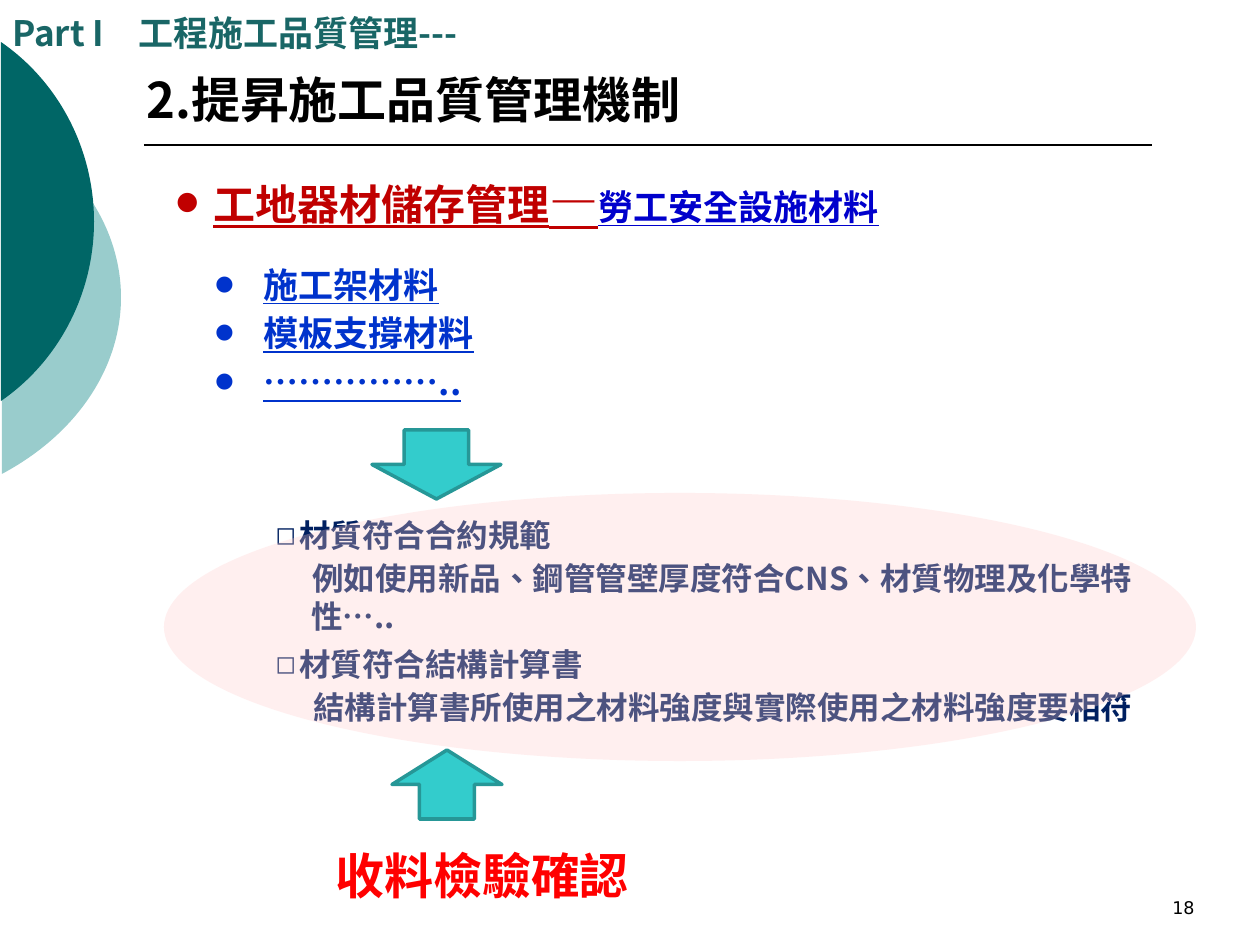
from pptx import Presentation
from pptx.dml.color import RGBColor
from pptx.enum.shapes import MSO_CONNECTOR, MSO_SHAPE
from pptx.enum.text import MSO_ANCHOR, MSO_AUTO_SIZE, PP_ALIGN
from pptx.oxml.ns import qn
from pptx.util import Pt
from lxml.etree import SubElement

SCALE = 914400 / 126
CJK = "Noto Sans CJK SC"
SYMBOL = "DejaVu Sans"
COLORS = {
    "light": "99CCCC", "dark": "006666", "black": "000000", "header": "196666",
    "navy": "002060", "blue": "0033CC", "link": "0000CC", "crimson": "C00000",
    "red": "FF0000", "arrow": "33CCCC", "edge": "269797", "pink": "FFCCCC",
}


def emu(px):
    """Turn a length in px into EMU."""
    return round(px * SCALE)


def color(name):
    """Look up a palette colour."""
    return RGBColor.from_string(COLORS[name])


def write(para, text, size=20, ink="black", font=CJK, bold=True, underline=False):
    """Add a formatted span of text to a paragraph."""
    span = para.add_run()
    span.text = text
    span.font.size = Pt(size)
    span.font.bold = bold
    span.font.underline = underline
    span.font.color.rgb = color(ink)
    span.font.name = font
    props = span._r.get_or_add_rPr()
    props.set("lang", "zh-TW")
    SubElement(props, qn("a:ea"), typeface=CJK)


def layout(para, left=0, indent=0, bullet=None, scale=60, tab=None, before=0, spacing=None):
    """Set the indents, bullet, tab stop and spacing of a paragraph."""
    props = para._p.get_or_add_pPr()
    props.set("marL", str(emu(left)))
    props.set("indent", str(emu(indent)))
    if bullet:
        SubElement(props, qn("a:buSzPct"), val=str(scale * 1000))
        SubElement(props, qn("a:buFont"), typeface=SYMBOL)
        SubElement(props, qn("a:buChar"), char=bullet)
    if tab:
        tabs = SubElement(props, qn("a:tabLst"))
        SubElement(tabs, qn("a:tab"), pos=str(emu(tab)), algn="l")
    para.space_before = Pt(before)
    if spacing:
        para.line_spacing = spacing


class Painter:
    """Holds the current page and draws each kind of element on it."""

    def __init__(self, page):
        self.shapes = page.shapes

    def finish(self, shape, fill, edge=None, opacity=None):
        """Apply fill, outline and transparency to a shape."""
        shape.shadow.inherit = False
        shape.fill.solid()
        shape.fill.fore_color.rgb = color(fill)
        if opacity:
            tone = shape._element.spPr.find(".//" + qn("a:srgbClr"))
            SubElement(tone, qn("a:alpha"), val=str(opacity * 1000))
        if edge:
            shape.line.color.rgb = color(edge)
            shape.line.width = Pt(2)
        else:
            shape.line.fill.background()

    def shape(self, kind, bounds, fill, **style):
        """Draw a preset shape."""
        self.finish(self.shapes.add_shape(kind, *map(emu, bounds)), fill, **style)

    def crescent(self, bounds, chord, bottom, shoulder, bend, reach, fill):
        """Draw the part of a disc to the right of an upright chord."""
        left, top, width, height = bounds
        right, base, middle = left + width, top + height, top + height / 2
        start = 2 * middle - bottom
        builder = self.shapes.build_freeform(emu(left), emu(top))
        builder.add_line_segments([(emu(x), emu(y)) for x, y in
                                   ((right, top), (right, base), (left, base))], close=True)
        disc = builder.convert_to_shape()
        outline = disc._element.spPr.find(".//" + qn("a:path"))
        for segment in list(outline):
            outline.remove(segment)
        steps = [
            ("moveTo", [(chord, start)]),
            ("cubicBezTo", [(shoulder, start + bend), (right, middle - reach), (right, middle)]),
            ("cubicBezTo", [(right, middle + reach), (shoulder, bottom - bend), (chord, bottom)]),
            ("close", []),
        ]
        for command, points in steps:
            segment = SubElement(outline, qn("a:" + command))
            for x, y in points:
                SubElement(segment, qn("a:pt"), x=str(emu(x - left)), y=str(emu(y - top)))
        self.finish(disc, fill)

    def rule(self, left, right, y):
        """Draw a thin horizontal line."""
        line = self.shapes.add_connector(MSO_CONNECTOR.STRAIGHT, *map(emu, (left, y, right, y)))
        line.line.color.rgb = color("black")
        line.line.width = Pt(1)
        SubElement(line._element.spPr, qn("a:effectLst"))

    def text(self, bounds, anchor=MSO_ANCHOR.TOP, wrap=True, grow=False):
        """Add a text box and return its frame."""
        frame = self.shapes.add_textbox(*map(emu, bounds)).text_frame
        frame.word_wrap = wrap
        frame.vertical_anchor = anchor
        frame.auto_size = MSO_AUTO_SIZE.SHAPE_TO_FIT_TEXT if grow else MSO_AUTO_SIZE.NONE
        return frame

    def label(self, bounds, text, anchor=MSO_ANCHOR.MIDDLE, wrap=True, grow=False, **style):
        """Add a one-paragraph text box and return its paragraph."""
        para = self.text(bounds, anchor, wrap, grow).paragraphs[0]
        write(para, text, **style)
        return para

    def listing(self, bounds, entries, anchor=MSO_ANCHOR.TOP, grow=False, **style):
        """Add a text box with one paragraph for each text and layout pair."""
        frame = self.text(bounds, anchor, grow=grow)
        for index, (text, form) in enumerate(entries):
            para = frame.add_paragraph() if index else frame.paragraphs[0]
            layout(para, **form)
            write(para, text, **style)


def main():
    """Build the slide and save the deck."""
    deck = Presentation()
    deck.slide_width, deck.slide_height = emu(1260), emu(945)
    painter = Painter(deck.slides.add_slide(deck.slide_layouts[6]))

    painter.crescent((-435, 82, 556, 431), 2, 474, 77, 40, 70, "light")
    painter.crescent((-333, 4, 427, 435), 1, 401, 59, 40, 72, "dark")
    painter.rule(144, 1152, 145)
    number = painter.label((1007, 861, 200, 63), "18", MSO_ANCHOR.BOTTOM,
                           size=10, font=SYMBOL, bold=False)
    number.alignment = PP_ALIGN.RIGHT
    header = painter.label((0, 0, 501, 66), "Part I\t工程施工品質管理---", ink="header")
    layout(header, tab=108)

    checks = [
        ("材質符合合約規範", "例如使用新品、鋼管管壁厚度符合CNS、材質物理及化學特性…..", 36),
        ("材質符合結構計算書", "結構計算書所使用之材料強度與實際使用之材料強度要相符", 37),
    ]
    entries = []
    for index, (check, detail, left) in enumerate(checks):
        entries.append((check, dict(left=24, indent=-24, bullet="◻", scale=80, before=6 * index)))
        entries.append((detail, dict(left=left, indent=1, before=3)))
    painter.listing((263, 510, 912, 224), entries, grow=True, size=18, ink="navy")

    materials = ["施工架材料", "模板支撐材料", "…………….."]
    painter.listing(
        (203, 234, 407, 208),
        [(name, dict(left=48, indent=-48, bullet="●", spacing=0.7, before=11 if index else 0))
         for index, name in enumerate(materials)],
        MSO_ANCHOR.MIDDLE, ink="blue", underline=True)

    heading = painter.text((164, 165, 973, 72), grow=True).paragraphs[0]
    layout(heading, left=37, indent=-37, bullet="●")
    for text, size, ink in (("工地器材儲存管理", 24, "crimson"), ("—", 28, "crimson"),
                            ("勞工安全設施材料", 20, "link")):
        write(heading, text, size, ink, font="Calibri", underline=True)

    painter.label((134, 56, 1022, 86), "2.提昇施工品質管理機制", size=28)
    painter.shape(MSO_SHAPE.DOWN_ARROW, (372, 430, 129, 69), "arrow", edge="edge")
    painter.shape(MSO_SHAPE.UP_ARROW, (392, 750, 110, 69), "arrow", edge="edge")
    painter.label((323, 839, 323, 72), "收料檢驗確認", MSO_ANCHOR.TOP,
                  wrap=False, grow=True, size=28, ink="red")
    painter.shape(MSO_SHAPE.OVAL, (164, 493, 1032, 268), "pink", opacity=30)
    deck.save("out.pptx")


if __name__ == "__main__":
    main()
